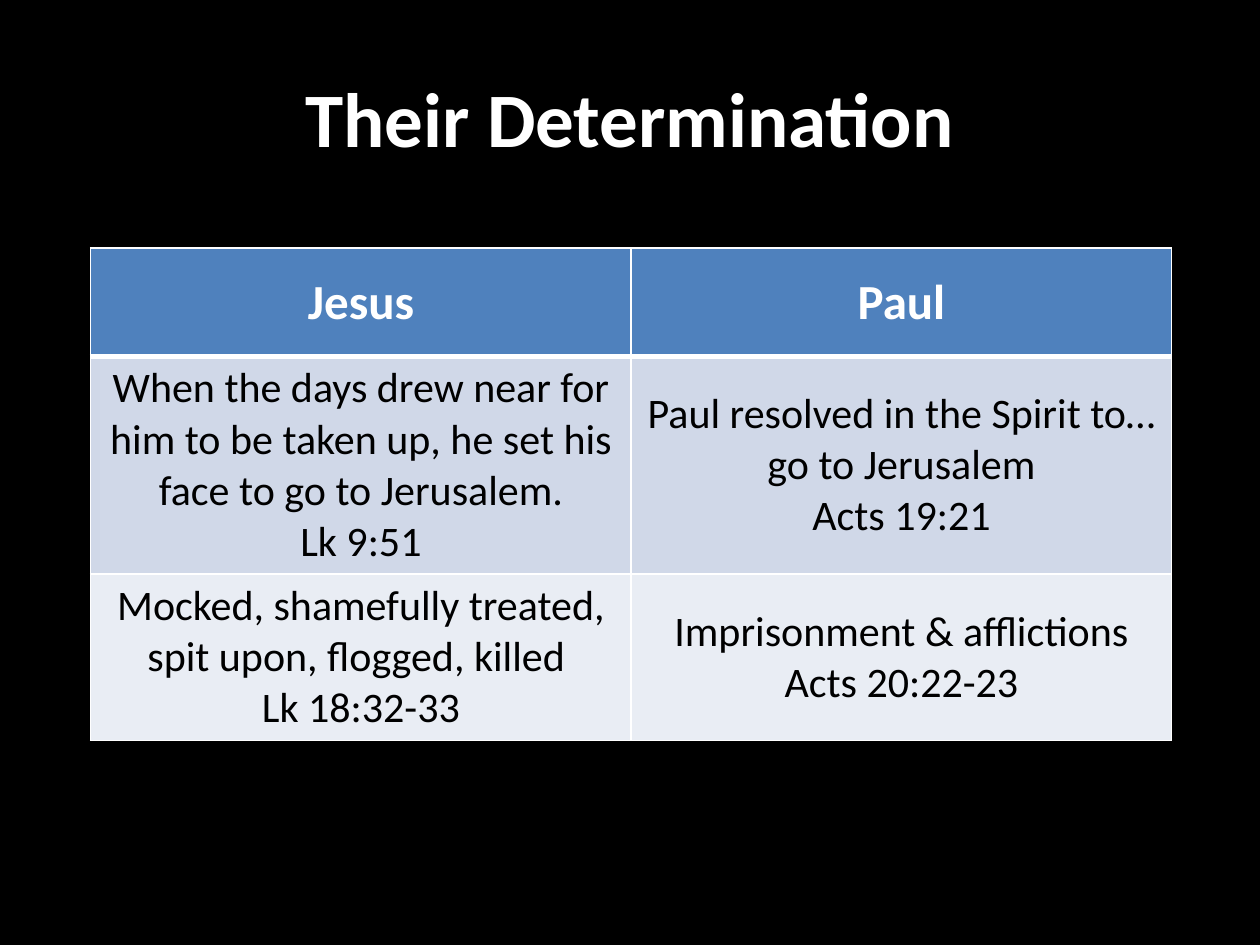
from lxml import etree
from pptx import Presentation
from pptx.dml.color import RGBColor
from pptx.enum.text import MSO_ANCHOR, PP_ALIGN
from pptx.oxml.ns import qn
from pptx.util import Inches, Pt

MIDDLE = MSO_ANCHOR.MIDDLE
CENTER = PP_ALIGN.CENTER

BLACK = RGBColor(0x00, 0x00, 0x00)
WHITE = RGBColor(0xFF, 0xFF, 0xFF)
HEADER_BLUE = RGBColor(0x4F, 0x81, 0xBD)
BAND_DARK = RGBColor(0xD0, 0xD8, 0xE8)
BAND_LIGHT = RGBColor(0xE9, 0xED, 0xF4)

TITLE_FORMAT = {"size": Pt(44), "bold": True, "color": WHITE}
HEADER_FORMAT = {"size": Pt(28), "bold": True, "color": WHITE}
BODY_FORMAT = {"size": Pt(24), "bold": False, "color": BLACK}

# Each row: height, fill, text format, and the paragraphs of each cell
COMPARISON = [
    (0.86, HEADER_BLUE, HEADER_FORMAT, [["Jesus"], ["Paul"]]),
    (1.71, BAND_DARK, BODY_FORMAT, [
        ["When the days drew near for him to be taken up, "
         "he set his face to go to Jerusalem.", "Lk 9:51"],
        ["Paul resolved in the Spirit to… go to Jerusalem", "Acts 19:21"],
    ]),
    (1.32, BAND_LIGHT, BODY_FORMAT, [
        ["Mocked, shamefully treated, spit upon, flogged, killed ", "Lk 18:32-33"],
        ["Imprisonment & afflictions", "Acts 20:22-23"],
    ]),
]


class SlideBuilder:
    font_name = "Calibri"

    def __init__(self, slide):
        self.slide = slide

    def background(self, color):
        fill = self.slide.background.fill
        fill.solid()
        fill.fore_color.rgb = color

    def set_lines(self, frame, lines, text_format):
        """Fill a text frame with one centred paragraph per line."""
        frame.word_wrap = True
        frame.text = "\n".join(lines)
        for paragraph in frame.paragraphs:
            paragraph.alignment = CENTER
            font = paragraph.runs[0].font
            font.name = self.font_name
            for attribute, value in text_format.items():
                if attribute == "color":
                    font.color.rgb = value
                else:
                    setattr(font, attribute, value)

    def title(self, text, left, top, width, height):
        box = self.slide.shapes.add_textbox(
            Inches(left), Inches(top), Inches(width), Inches(height))
        box.text_frame.vertical_anchor = MIDDLE
        self.set_lines(box.text_frame, [text], TITLE_FORMAT)

    def border(self, cell, side, points):
        line = etree.SubElement(
            cell._tc.get_or_add_tcPr(), qn(f"a:ln{side}"), w=str(Pt(points)))
        solid = etree.SubElement(line, qn("a:solidFill"))
        etree.SubElement(solid, qn("a:srgbClr"), val=str(WHITE))

    def table(self, rows, left, top, column_width):
        column_count = len(rows[0][3])
        height = sum(row[0] for row in rows)
        table = self.slide.shapes.add_table(
            len(rows), column_count, Inches(left), Inches(top),
            Inches(column_width * column_count), Inches(height)).table
        for row_index, (row_height, color, text_format, texts) in enumerate(rows):
            table.rows[row_index].height = Inches(row_height)
            for column_index, lines in enumerate(texts):
                cell = table.cell(row_index, column_index)
                cell.vertical_anchor = MIDDLE
                self.set_lines(cell.text_frame, lines, text_format)
                # The rule under the header is heavier than the grid
                widths = {"L": 1, "R": 1,
                          "T": 3 if row_index == 1 else 1,
                          "B": 3 if row_index == 0 else 1}
                for side, points in widths.items():
                    self.border(cell, side, points)
                cell.fill.solid()
                cell.fill.fore_color.rgb = color


def main():
    presentation = Presentation()
    presentation.slide_width = Inches(10)
    presentation.slide_height = Inches(7.5)
    blank = presentation.slide_layouts[6]
    builder = SlideBuilder(presentation.slides.add_slide(blank))
    builder.background(BLACK)
    builder.table(COMPARISON, 0.72, 1.97, 4.29)
    builder.title("Their Determination", 0.5, 0.3, 9, 1.25)
    presentation.save("out.pptx")


if __name__ == "__main__":
    main()
